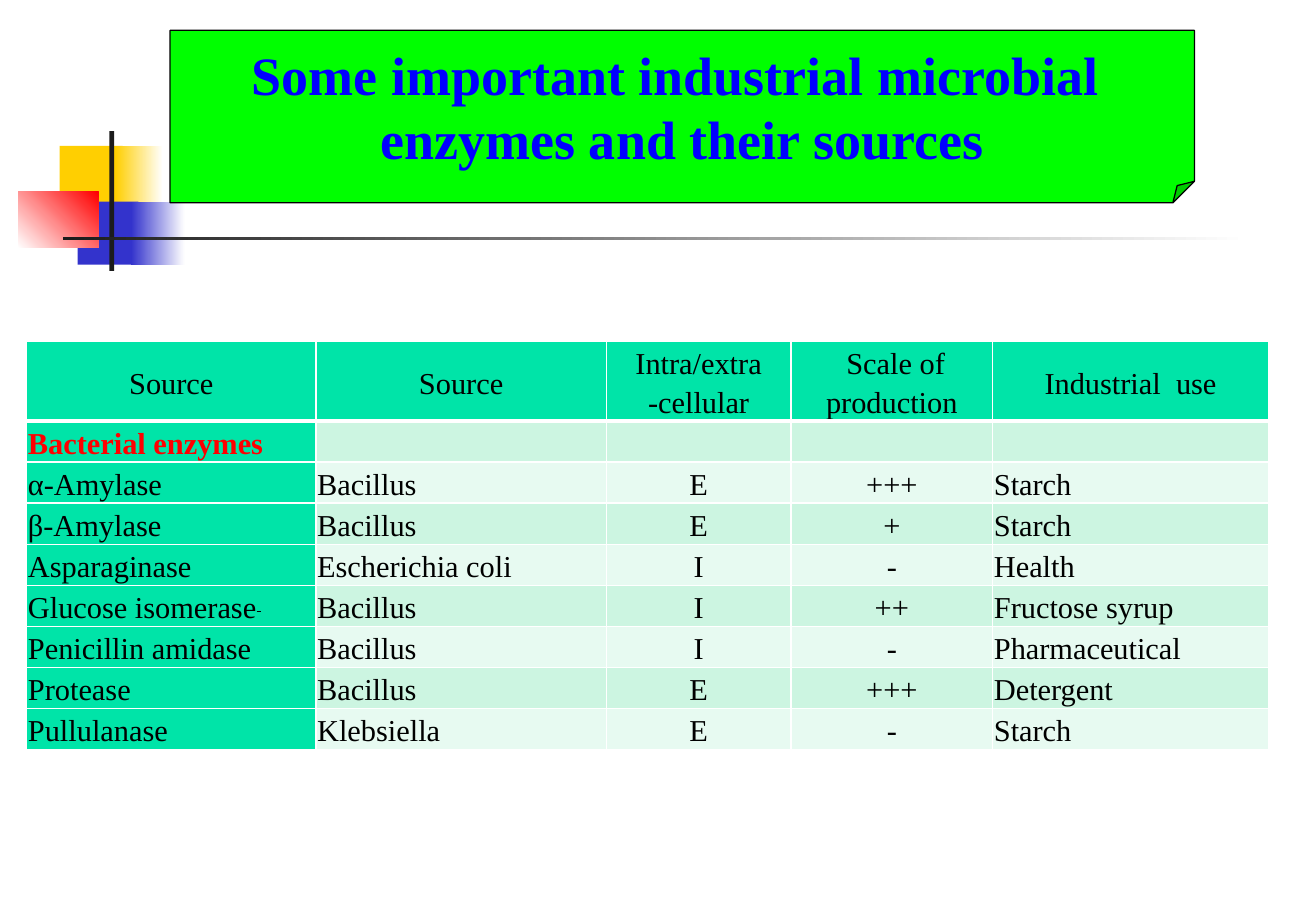
from lxml import etree
from pptx import Presentation
from pptx.dml.color import RGBColor
from pptx.enum import shapes, text
from pptx.oxml.ns import qn
from pptx.util import Inches, Pt

FONT = "Times New Roman"
WHITE = RGBColor(0xFF, 0xFF, 0xFF)
BLACK = RGBColor(0, 0, 0)
INK = RGBColor(0x1C, 0x1C, 0x1C)
GOLD = RGBColor(0xFF, 0xCF, 0x01)
NAVY = RGBColor(0x33, 0x33, 0xCC)
RED = RGBColor(0xFF, 0, 0)
LIME = RGBColor(0, 0xFF, 0)
BLUE = RGBColor(0, 0, 0xFF)
TEAL = RGBColor(0, 0xE4, 0xA8)
MINT = RGBColor(0xCC, 0xF5, 0xE1)
PALE = RGBColor(0xE7, 0xFA, 0xF1)

HEAD = ["Source", "Source", "Intra/extra\v-cellular",
        " Scale of production", "Industrial  use"]
GROUP = "Bacterial enzymes"
ROWS = [
    HEAD,
    [GROUP, "", "", "", ""],
    ["α-Amylase", "Bacillus", "E", "+++", "Starch"],
    ["β-Amylase", "Bacillus", "E", "+", "Starch"],
    ["Asparaginase", "Escherichia coli", "I", "-", "Health"],
    ["Glucose isomerase", "Bacillus", "I", "++", "Fructose syrup"],
    ["Penicillin amidase", "Bacillus", "I", "-", "Pharmaceutical"],
    ["Protease", "Bacillus", "E", "+++", "Detergent"],
    ["Pullulanase", "Klebsiella", "E", "-", "Starch"],
]
WIDTHS = [2.38, 2.39, 1.52, 1.66, 2.27]


def add_rect(slide, box, start, end=None, angle=0):
    """Borderless bar, solid or fading from start to end."""
    bar = slide.shapes.add_shape(shapes.MSO_SHAPE.RECTANGLE, *map(Inches, box))
    bar.shadow.inherit = False
    bar.line.fill.background()
    if end is None:
        bar.fill.solid()
        bar.fill.fore_color.rgb = start
        return
    bar.fill.gradient()
    bar.fill.gradient_angle = angle
    for stop, color in zip(bar.fill.gradient_stops, (start, end)):
        stop.color.rgb = color


def add_emblem(slide, x, y):
    """Overlapping squares with a cross of two bars."""
    add_rect(slide, (x + .34, y + .12, .52, .52), GOLD)
    add_rect(slide, (x + .8, y + .12, .39, .52), GOLD, WHITE)
    add_rect(slide, (x + .49, y + .58, .5, .52), NAVY)
    add_rect(slide, (x + .93, y + .58, .44, .52), NAVY, WHITE)
    add_rect(slide, (x, y + .5, .66, .46), WHITE, RED, 45)
    add_rect(slide, (x + .75, y, .04, 1.15), INK)
    add_rect(slide, (x + .37, y + .87, 9.75, .03), INK, WHITE)


def add_title(slide, box):
    note = slide.shapes.add_shape(shapes.MSO_SHAPE.FOLDED_CORNER, *map(Inches, box))
    guides = note._element.spPr.find(qn("a:prstGeom")).get_or_add_avLst()
    etree.SubElement(guides, qn("a:gd"), name="adj", fmla="val 12500")
    note.shadow.inherit = False
    note.fill.solid()
    note.fill.fore_color.rgb = LIME
    note.line.color.rgb = BLACK
    note.line.width = Pt(.75)
    frame = note.text_frame
    frame.word_wrap = False
    frame.vertical_anchor = text.MSO_ANCHOR.MIDDLE
    frame.text = "Some important industrial microbial \nenzymes and their sources"
    for line in frame.paragraphs:
        line.alignment = text.PP_ALIGN.CENTER
        style(line.font, 32, BLUE, True)


def style(font, size, color, bold=False):
    font.name = FONT
    font.size = Pt(size)
    font.bold = bold
    font.color.rgb = color


def set_edges(cell, bottom):
    """White cell borders, placed ahead of the fill."""
    props = cell._tc.get_or_add_tcPr()
    for i, (side, width) in enumerate(zip("LRTB", (1, 1, 1, bottom))):
        edge = etree.Element(qn(f"a:ln{side}"), w=str(Pt(width)))
        fill = etree.SubElement(edge, qn("a:solidFill"))
        etree.SubElement(fill, qn("a:srgbClr"), val=str(WHITE))
        props.insert(i, edge)


def fill_cell(cell, words, row, col):
    cell.margin_left = cell.margin_right = Inches(.01)
    cell.margin_top = cell.margin_bottom = Inches(.01)
    cell.vertical_anchor = text.MSO_ANCHOR.MIDDLE
    cell.fill.solid()
    band = MINT if row % 2 else PALE
    cell.fill.fore_color.rgb = TEAL if row == 0 or col == 0 else band
    set_edges(cell, 3 if row == 0 else 1)
    cell.text = words
    line = cell.text_frame.paragraphs[0]
    line.line_spacing = 1.15
    if row == 0 or col in (2, 3):
        line.alignment = text.PP_ALIGN.CENTER
    group = words == GROUP
    style(line.font, 18, RED if group else BLACK, group)
    if words == "Glucose isomerase":
        mark = line.add_run()
        mark.text = " "
        mark.font.underline = True
        mark._r.get_or_add_rPr().set("baseline", "30000")


def add_grid(slide, x, y, head, step):
    high = head + step * (len(ROWS) - 1)
    grid = slide.shapes.add_table(len(ROWS), len(WIDTHS), Inches(x), Inches(y),
                                  Inches(sum(WIDTHS)), Inches(high)).table
    for col, width in zip(grid.columns, WIDTHS):
        col.width = Inches(width)
    for r, words in enumerate(ROWS):
        grid.rows[r].height = Inches(step if r else head)
        for c, word in enumerate(words):
            fill_cell(grid.cell(r, c), word, r, c)


def main():
    deck = Presentation()
    deck.slide_width, deck.slide_height = Inches(10.83), Inches(7.5)
    slide = deck.slides.add_slide(deck.slide_layouts[6])
    add_emblem(slide, .15, 1.08)
    add_title(slide, (1.4, .25, 8.43, 1.42))
    add_grid(slide, .22, 2.81, .65, .33)
    deck.save("out.pptx")


if __name__ == "__main__":
    main()
